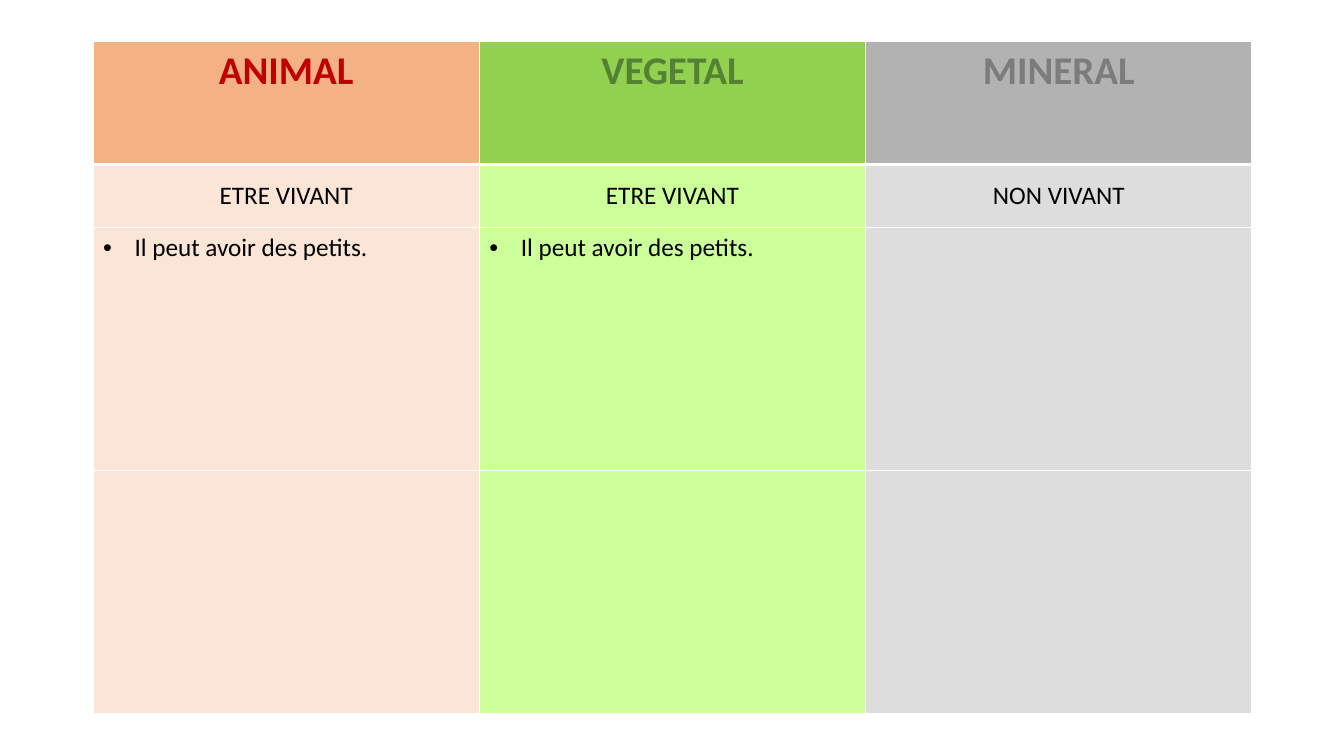
import pptx
import pptx.util
import pptx.dml.color
import pptx.enum.text
import pptx.oxml

Pt = pptx.util.Pt
ALIGN = pptx.enum.text.PP_ALIGN
ANCHOR = pptx.enum.text.MSO_ANCHOR

ROWS = [
    ("ANIMAL", "VEGETAL", "MINERAL"),
    ("ETRE VIVANT", "ETRE VIVANT", "NON VIVANT"),
    ("Il peut avoir des petits.", "Il peut avoir des petits.", ""),
    ("", "", ""),
]
COLORS = {
    "head": ("F4B183", "92D050", "B2B2B2"),
    "body": ("FBE5D6", "CCFF99", "DDDDDD"),
    "title": ("C00000", "548235", "7C7C7C"),
    "text": "000000",
    "line": "FFFFFF",
}
LEFT, TOP, WIDTH = 66.4, 29.8, 828
HEIGHTS = (87.7, 45.2, 173.6, 173.6)
INDENT = 22.5
NS = 'xmlns:a="http://schemas.openxmlformats.org/drawingml/2006/main"'


def write(cell, text, size=18, color=COLORS["text"], bold=False,
          align=ALIGN.LEFT, anchor=ANCHOR.TOP, bullet=False):
    cell.vertical_anchor = anchor
    para = cell.text_frame.paragraphs[0]
    para.alignment = align
    if bullet:
        props = para._p.get_or_add_pPr()
        props.set("marL", str(Pt(INDENT)))
        props.set("indent", str(-Pt(INDENT)))
        props.append(pptx.oxml.parse_xml(f'<a:buFont {NS} typeface="Arial"/>'))
        props.append(pptx.oxml.parse_xml(f'<a:buChar {NS} char="•"/>'))
    run = para.add_run()
    run.text = text
    font = run.font
    font.name = "Calibri"
    font.size = Pt(size)
    font.bold = bold
    font.color.rgb = pptx.dml.color.RGBColor.from_string(color)


def paint(cell, fill, row):
    props = cell._tc.get_or_add_tcPr()
    widths = {"L": 1, "R": 1, "T": 3 if row == 1 else 1, "B": 3 if row == 0 else 1}
    for side, width in widths.items():
        props.append(pptx.oxml.parse_xml(
            f'<a:ln{side} {NS} w="{Pt(width)}"><a:solidFill>'
            f'<a:srgbClr val="{COLORS["line"]}"/></a:solidFill></a:ln{side}>'))
    cell.fill.solid()
    cell.fill.fore_color.rgb = pptx.dml.color.RGBColor.from_string(fill)


def main():
    deck = pptx.Presentation()
    deck.slide_width, deck.slide_height = Pt(960), Pt(540)
    slide = deck.slides.add_slide(deck.slide_layouts[6])
    count = len(ROWS[0])
    table = slide.shapes.add_table(len(ROWS), count, Pt(LEFT), Pt(TOP),
                                   Pt(WIDTH), Pt(sum(HEIGHTS))).table
    table.horz_banding = False
    for col in table.columns:
        col.width = Pt(WIDTH / count)
    for row, texts in enumerate(ROWS):
        table.rows[row].height = Pt(HEIGHTS[row])
        for col, text in enumerate(texts):
            cell = table.cell(row, col)
            paint(cell, COLORS["head" if row == 0 else "body"][col], row)
            if not text:
                continue
            if row == 0:
                write(cell, text, size=28, color=COLORS["title"][col],
                      bold=True, align=ALIGN.CENTER)
            elif row == 1:
                write(cell, text, align=ALIGN.CENTER, anchor=ANCHOR.MIDDLE)
            else:
                write(cell, text, bullet=True)
    deck.save("out.pptx")


if __name__ == "__main__":
    main()
